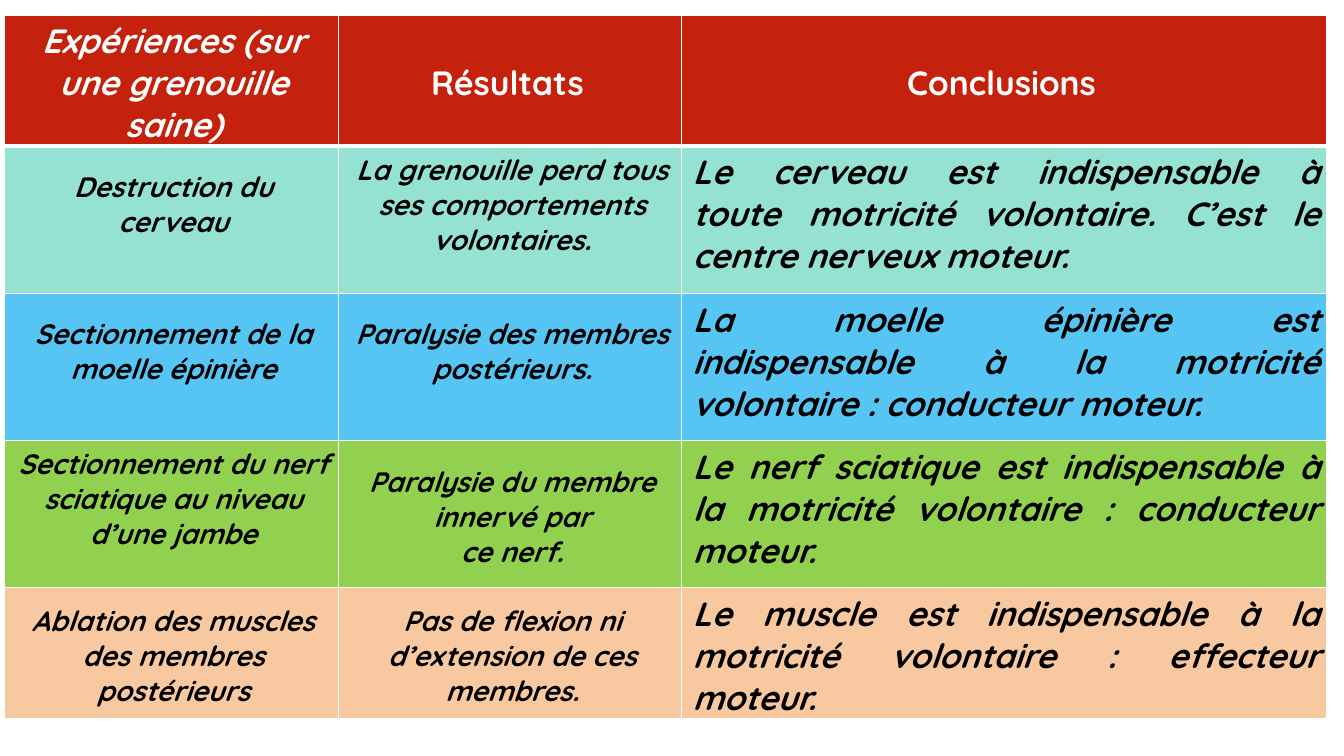
from dataclasses import dataclass

from lxml.etree import SubElement
from pptx import Presentation
from pptx.dml.color import RGBColor
from pptx.enum.text import MSO_ANCHOR, PP_ALIGN
from pptx.oxml.ns import qn
from pptx.table import Table, _Cell
from pptx.util import Inches, Pt

WHITE = RGBColor(0xFF, 0xFF, 0xFF)
BLACK = RGBColor(0x00, 0x00, 0x00)
RED = RGBColor(0xC4, 0x22, 0x0D)
MINT = RGBColor(0x96, 0xE2, 0xD2)
BLUE = RGBColor(0x56, 0xC5, 0xF4)
GREEN = RGBColor(0x92, 0xD0, 0x50)
PEACH = RGBColor(0xF8, 0xC9, 0xA0)

COLUMN_WIDTHS = (3.32, 3.4, 6.4)
ROW_HEIGHTS = (0.68, 1.46, 1.46, 1.46, 1.2)
MARGINS = {"margin_left": 0.11, "margin_right": 0.07, "margin_top": 0.05, "margin_bottom": 0}
RAISED_MARGIN = 0.35


@dataclass(frozen=True)
class CellStyle:
    size: int
    color: RGBColor
    alignment: PP_ALIGN
    anchor: MSO_ANCHOR
    italic: bool = True


@dataclass(frozen=True)
class Experiment:
    fill: RGBColor
    texts: tuple[str, str, str]
    raised_columns: tuple[int, ...] = ()


HEADER_STYLES = tuple(
    CellStyle(24, WHITE, PP_ALIGN.CENTER, MSO_ANCHOR.MIDDLE, italic)
    for italic in (True, False, False)
)
OBSERVATION = CellStyle(20, BLACK, PP_ALIGN.CENTER, MSO_ANCHOR.MIDDLE)
CONCLUSION = CellStyle(24, BLACK, PP_ALIGN.JUSTIFY, MSO_ANCHOR.TOP)
BODY_STYLES = (OBSERVATION, OBSERVATION, CONCLUSION)

ROWS = (
    Experiment(RED, (
        "Expériences (sur une grenouille\vsaine)",
        "Résultats ",
        "Conclusions ",
    )),
    Experiment(MINT, (
        "Destruction du cerveau",
        "La grenouille perd tous ses comportements volontaires.",
        "Le cerveau est indispensable à\vtoute motricité volontaire. "
        "C’est le centre nerveux moteur.",
    ), (0, 1)),
    Experiment(BLUE, (
        "Sectionnement de la moelle épinière",
        "Paralysie des membres postérieurs.",
        "La moelle épinière est\vindispensable à la motricité\v"
        "volontaire : conducteur moteur.",
    ), (0, 1)),
    Experiment(GREEN, (
        "Sectionnement du nerf sciatique au niveau d’une jambe",
        "Paralysie du membre innervé par\vce nerf.",
        "Le nerf sciatique est indispensable à la motricité volontaire : conducteur moteur.",
    ), (0,)),
    Experiment(PEACH, (
        "Ablation des muscles des membres postérieurs",
        "Pas de flexion ni d’extension de ces membres.",
        "Le muscle est indispensable à la motricité volontaire : effecteur moteur.",
    )),
)


def set_borders(cell: _Cell, top: int, bottom: int) -> None:
    properties = cell._tc.get_or_add_tcPr()
    for side, width in {"L": 1, "R": 1, "T": top, "B": bottom}.items():
        line = SubElement(properties, qn(f"a:ln{side}"), w=str(Pt(width)))
        fill = SubElement(line, qn("a:solidFill"))
        SubElement(fill, qn("a:srgbClr"), val=str(WHITE))


def fill_cell(cell: _Cell, text: str, fill: RGBColor, style: CellStyle, raised: bool) -> None:
    cell.fill.solid()
    cell.fill.fore_color.rgb = fill
    cell.vertical_anchor = style.anchor
    margins = MARGINS | ({"margin_bottom": RAISED_MARGIN} if raised else {})
    for name, value in margins.items():
        setattr(cell, name, Inches(value))
    paragraph = cell.text_frame.paragraphs[0]
    paragraph.text = text
    paragraph.alignment = style.alignment
    font_format = {
        "name": "Quicksand",
        "size": Pt(style.size),
        "bold": True,
        "italic": style.italic,
    }
    for run in paragraph.runs:
        for name, value in font_format.items():
            setattr(run.font, name, value)
        run.font.color.rgb = style.color


def fill_table(table: Table) -> None:
    for column, width in zip(table.columns, COLUMN_WIDTHS):
        column.width = Inches(width)
    for row, height in zip(table.rows, ROW_HEIGHTS):
        row.height = Inches(height)
    for row_index, experiment in enumerate(ROWS):
        styles = BODY_STYLES if row_index else HEADER_STYLES
        for column_index, (text, style) in enumerate(zip(experiment.texts, styles)):
            cell = table.cell(row_index, column_index)
            set_borders(cell, 3 if row_index == 1 else 1, 3 if row_index == 0 else 1)
            raised = column_index in experiment.raised_columns
            fill_cell(cell, text, experiment.fill, style, raised)


def main() -> None:
    presentation = Presentation()
    presentation.slide_width = Inches(13.33)
    presentation.slide_height = Inches(7.5)
    slide = presentation.slides.add_slide(presentation.slide_layouts[6])
    table_height = Inches(6.88)
    frame = slide.shapes.add_table(
        len(ROWS), len(COLUMN_WIDTHS), Inches(0.04), Inches(0.15), Inches(13.13), table_height
    )
    fill_table(frame.table)
    frame.height = table_height
    presentation.save("out.pptx")


if __name__ == "__main__":
    main()
